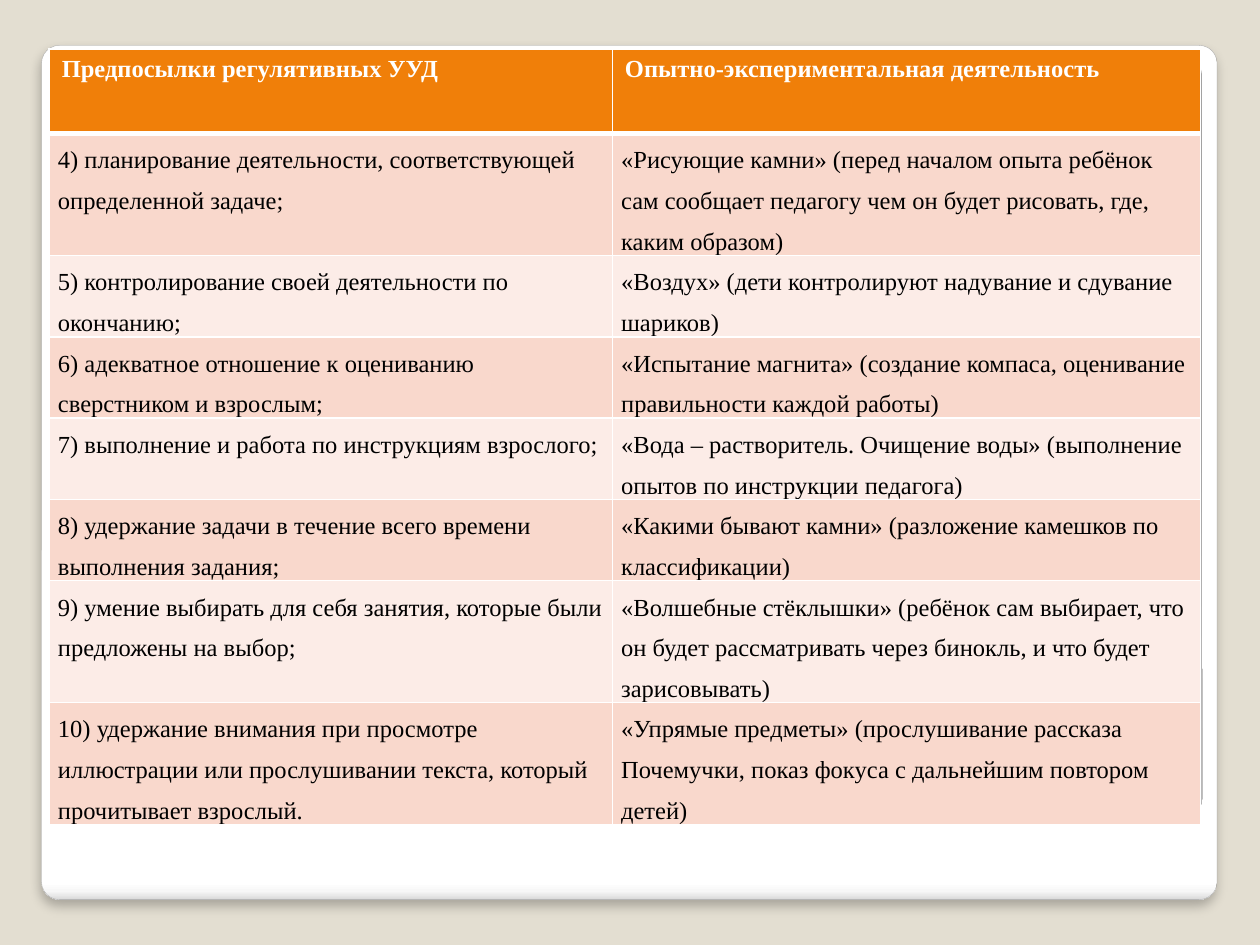
from pptx import Presentation
from pptx import oxml
from pptx import util as u
from pptx.dml.color import RGBColor
from pptx.enum import shapes
from pptx.oxml import ns

BACKGROUND = RGBColor(0xE3, 0xDE, 0xD1)
WHITE = RGBColor(0xFF, 0xFF, 0xFF)
BLACK = RGBColor(0, 0, 0)
EDGE = RGBColor(0xA4, 0xA4, 0xA4)
ORANGE = RGBColor(0xF0, 0x7F, 0x09)
BANDS = (RGBColor(0xF9, 0xD8, 0xCC), RGBColor(0xFC, 0xEC, 0xE7))

HEADINGS = ("Предпосылки регулятивных УУД", "Опытно-экспериментальная деятельность")
ACTIVITIES = (
    ("4) планирование деятельности, соответствующей определенной задаче;",
     "«Рисующие камни» (перед началом опыта ребёнок сам сообщает педагогу чем он будет рисовать, где, каким образом)"),
    ("5) контролирование своей деятельности по окончанию;",
     "«Воздух» (дети контролируют надувание и сдувание шариков)"),
    ("6) адекватное отношение к оцениванию сверстником и взрослым;",
     "«Испытание магнита» (создание компаса, оценивание правильности каждой работы)"),
    ("7) выполнение и работа по инструкциям взрослого;",
     "«Вода – растворитель. Очищение воды» (выполнение опытов по инструкции педагога)"),
    ("8) удержание задачи в течение всего времени выполнения задания;",
     "«Какими бывают камни» (разложение камешков по классификации)"),
    ("9) умение выбирать для себя занятия, которые были предложены на выбор;",
     "«Волшебные стёклышки» (ребёнок сам выбирает, что он будет рассматривать через бинокль, и что будет зарисовывать)"),
    ("10) удержание внимания при просмотре иллюстрации или прослушивании текста, который прочитывает взрослый.",
     "«Упрямые предметы» (прослушивание рассказа Почемучки, показ фокуса с дальнейшим повтором детей)"),
)

LINEAR = '<a:lin ang="5400000" scaled="0"/>'
RADIAL = '<a:path path="circle"><a:fillToRect l="50000" t="175000" r="50000" b="-75000"/></a:path>'


def drawing(tag, body, attributes=""):
    return oxml.parse_xml(f'<a:{tag} {ns.nsdecls("a")} {attributes}>{body}</a:{tag}>')


class SlideBuilder:
    font = "Times New Roman"
    size = u.Pt(14)

    def __init__(self, slide):
        self.slide = slide

    def background(self, color):
        fill = self.slide.background.fill
        fill.solid()
        fill.fore_color.rgb = color

    def panel(self, left, top, width, height, stops, direction):
        panel = self.slide.shapes.add_shape(
            shapes.MSO_SHAPE.ROUNDED_RECTANGLE, *map(u.Inches, (left, top, width, height)))
        panel.adjustments[0] = 0.021
        panel.fill.gradient()
        properties = panel.fill._xPr
        stop_list = "".join(
            f'<a:gs pos="{position * 1000}"><a:srgbClr val="{color}"/></a:gs>'
            for position, color in stops)
        properties.replace(properties.find(ns.qn("a:gradFill")),
                           drawing("gradFill", f"<a:gsLst>{stop_list}</a:gsLst>{direction}"))
        panel.line.fill.background()
        panel.shadow.inherit = False
        return panel

    def outline(self, panel, color, width):
        panel.line.color.rgb = color
        panel.line.width = u.Pt(width)

    def drop_shadow(self, panel, blur, distance):
        effects = panel.fill._xPr.find(ns.qn("a:effectLst"))
        effects.append(drawing(
            "outerShdw", '<a:srgbClr val="000000"><a:alpha val="25000"/></a:srgbClr>',
            f'blurRad="{u.Pt(blur)}" dist="{u.Pt(distance)}" dir="5400000" algn="t" rotWithShape="0"'))

    def borders(self, cell, **widths):
        properties = cell._tc.get_or_add_tcPr()
        for index, side in enumerate("LRTB"):
            properties.insert(index, drawing(
                f"ln{side}", f'<a:solidFill><a:srgbClr val="{WHITE}"/></a:solidFill>',
                f'w="{u.Pt(widths.get(side, 1))}"'))

    def cell(self, cell, content, fill, color, bold):
        cell.text = content
        cell.fill.solid()
        cell.fill.fore_color.rgb = fill
        paragraph = cell.text_frame.paragraphs[0]
        paragraph.font.name = self.font
        paragraph.font.size = self.size
        paragraph.font.bold = bold
        paragraph.font.color.rgb = color
        return paragraph

    def heading_cell(self, cell, content):
        self.cell(cell, content, ORANGE, WHITE, True)
        self.borders(cell, B=3)

    def body_cell(self, cell, content, fill, top_border):
        paragraph = self.cell(cell, content, fill, BLACK, False)
        paragraph.line_spacing = 1.5
        cell.margin_left = cell.margin_right = u.Inches(0.07)
        cell.margin_top = cell.margin_bottom = 0
        self.borders(cell, T=top_border)

    def table(self, left, top, widths, heading_height, row_height, headings, rows):
        height = heading_height + row_height * len(rows)
        table = self.slide.shapes.add_table(
            len(rows) + 1, len(headings),
            *map(u.Inches, (left, top, sum(widths), height))).table
        table.first_row = True
        table.horz_banding = False
        for column, width in zip(table.columns, widths):
            column.width = u.Inches(width)
        for row in table.rows:
            row.height = u.Inches(row_height)
        table.rows[0].height = u.Inches(heading_height)
        for column, heading in enumerate(headings):
            self.heading_cell(table.cell(0, column), heading)
        for index, row in enumerate(rows):
            for column, content in enumerate(row):
                self.body_cell(table.cell(index + 1, column), content,
                               BANDS[index % 2], 1 if index else 3)


def main():
    deck = Presentation()
    deck.slide_width, deck.slide_height = u.Inches(10), u.Inches(7.5)
    builder = SlideBuilder(deck.slides.add_slide(deck.slide_layouts[6]))
    builder.background(BACKGROUND)
    card = builder.panel(
        0.33, 0.36, 9.33, 6.78,
        ((0, "FFFFFF"), (98, "FFFFFF"), (99, "F7F7F7"), (100, "DADADA")), LINEAR)
    builder.outline(card, EDGE, 0.16)
    builder.drop_shadow(card, 6, 4)
    builder.panel(0.46, 0.47, 9.08, 6,
                  ((0, "FFFFFF"), (55, "E1E1E1"), (100, "A2A2A2")), RADIAL)
    builder.table(0.39, 0.39, (4.47, 4.67), 0.67, 0.41, HEADINGS, ACTIVITIES)
    deck.save("out.pptx")


if __name__ == "__main__":
    main()
